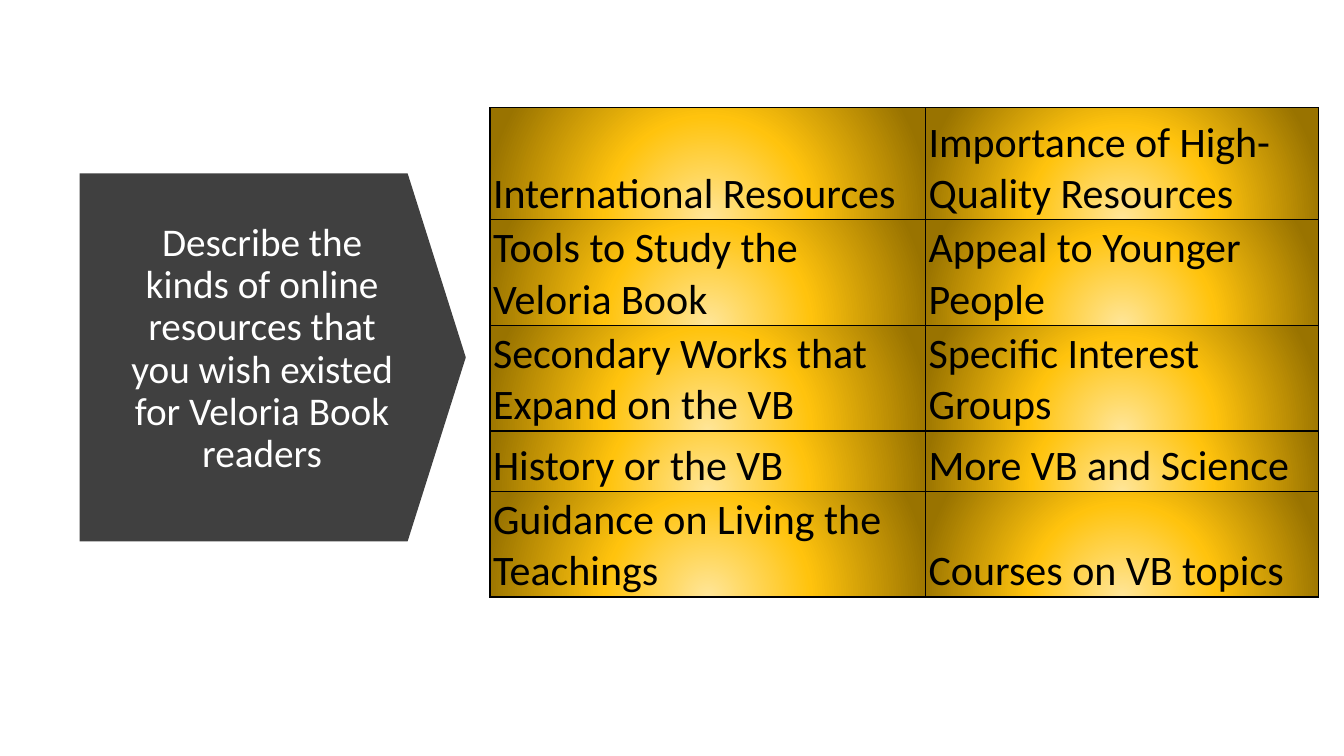
import pptx
import pptx.dml.color
import pptx.enum.shapes
import pptx.enum.text
import pptx.oxml
import pptx.oxml.ns
import pptx.util

Inches = pptx.util.Inches
Pt = pptx.util.Pt
DRAWING = pptx.oxml.ns.nsdecls("a")

PROMPT = "Describe the kinds of online resources that you wish existed for Veloria Book readers"
RESOURCES = [
    ("International Resources", "Importance of High-Quality Resources"),
    ("Tools to Study the Veloria Book", "Appeal to Younger People"),
    ("Secondary Works that Expand on the VB", "Specific Interest Groups"),
    ("History or the VB", "More VB and Science"),
    ("Guidance on Living the Teachings", "Courses on VB topics"),
]
COLUMN_WIDTHS = (4.32, 3.9)
ROW_HEIGHTS = (1.11, 0.6, 0.6, 0.6, 0.6)
GOLD_STOPS = ((0, "FFE699"), (46, "FFC30D"), (100, "997300"))


def color(value):
    """Return the RGB colour for a hex string."""
    return pptx.dml.color.RGBColor.from_string(value)


def format_text(paragraph, size, value):
    """Set the font of every run in a paragraph."""
    for run in paragraph.runs:
        run.font.name = "Calibri"
        run.font.size = Pt(size)
        run.font.color.rgb = color(value)


def add_prompt(slide, left, top, width, height):
    """Place the right-pointing arrow in the box and the title upon it."""
    arrow = slide.shapes.add_shape(
        pptx.enum.shapes.MSO_SHAPE.DOWN_ARROW,
        Inches(left + (width - height) / 2), Inches(top + (height - width) / 2),
        Inches(height), Inches(width))
    arrow.rotation = 270
    arrow.adjustments[0] = 1
    arrow.adjustments[1] = 0.158
    arrow.shadow.inherit = False
    arrow.fill.solid()
    arrow.fill.fore_color.rgb = color("404040")
    arrow.line.fill.background()

    title = slide.shapes.title
    title._element.addprevious(arrow._element)
    title.left, title.top = Inches(left + 0.37), Inches(top + 0.35)
    title.width, title.height = Inches(2.88), Inches(2.79)
    frame = title.text_frame
    frame.text = PROMPT
    frame.word_wrap = True
    frame.auto_size = pptx.enum.text.MSO_AUTO_SIZE.NONE
    frame.vertical_anchor = pptx.enum.text.MSO_ANCHOR.MIDDLE
    paragraph = frame.paragraphs[0]
    paragraph.alignment = pptx.enum.text.PP_ALIGN.CENTER
    paragraph.line_spacing = 0.9
    format_text(paragraph, 28, "FFFFFF")


def paint_cell(cell):
    """Give a cell black borders and a gold radial gradient."""
    properties = cell._tc.get_or_add_tcPr()
    for side in "LRTB":
        properties.append(pptx.oxml.parse_xml(
            f'<a:ln{side} {DRAWING} w="12700"><a:solidFill><a:srgbClr val="000000"/>'
            f'</a:solidFill></a:ln{side}>'))
    stops = "".join(
        f'<a:gs pos="{position * 1000}"><a:srgbClr val="{value}"/></a:gs>'
        for position, value in GOLD_STOPS)
    properties.append(pptx.oxml.parse_xml(
        f'<a:gradFill {DRAWING}><a:gsLst>{stops}</a:gsLst><a:path path="circle">'
        '<a:fillToRect l="50000" t="130000" r="50000" b="-30000"/></a:path></a:gradFill>'))


def add_resources(slide, left, top, width, height):
    """Place the table of wished-for resources in the box."""
    table = slide.shapes.add_table(
        len(RESOURCES), len(COLUMN_WIDTHS),
        Inches(left), Inches(top), Inches(width), Inches(height)).table
    table.first_row = table.horz_banding = False
    for column, column_width in zip(table.columns, COLUMN_WIDTHS):
        column.width = Inches(column_width)
    for row, row_height, topics in zip(table.rows, ROW_HEIGHTS, RESOURCES):
        row.height = Inches(row_height)
        for cell, topic in zip(row.cells, topics):
            cell.text_frame.text = topic
            cell.vertical_anchor = pptx.enum.text.MSO_ANCHOR.BOTTOM
            cell.margin_left = cell.margin_right = cell.margin_top = Inches(0.03)
            cell.margin_bottom = 0
            format_text(cell.text_frame.paragraphs[0], 30, "000000")
            paint_cell(cell)


def main():
    """Build and save the slide."""
    deck = pptx.Presentation()
    deck.slide_width, deck.slide_height = Inches(13.33), Inches(7.5)
    slide = deck.slides.add_slide(deck.slide_layouts.get_by_name("Title Only"))
    add_prompt(slide, 0.79, 1.72, 3.83, 3.65)
    add_resources(slide, 4.86, 1.07, 8.22, 4.79)
    deck.save("out.pptx")


if __name__ == "__main__":
    main()
